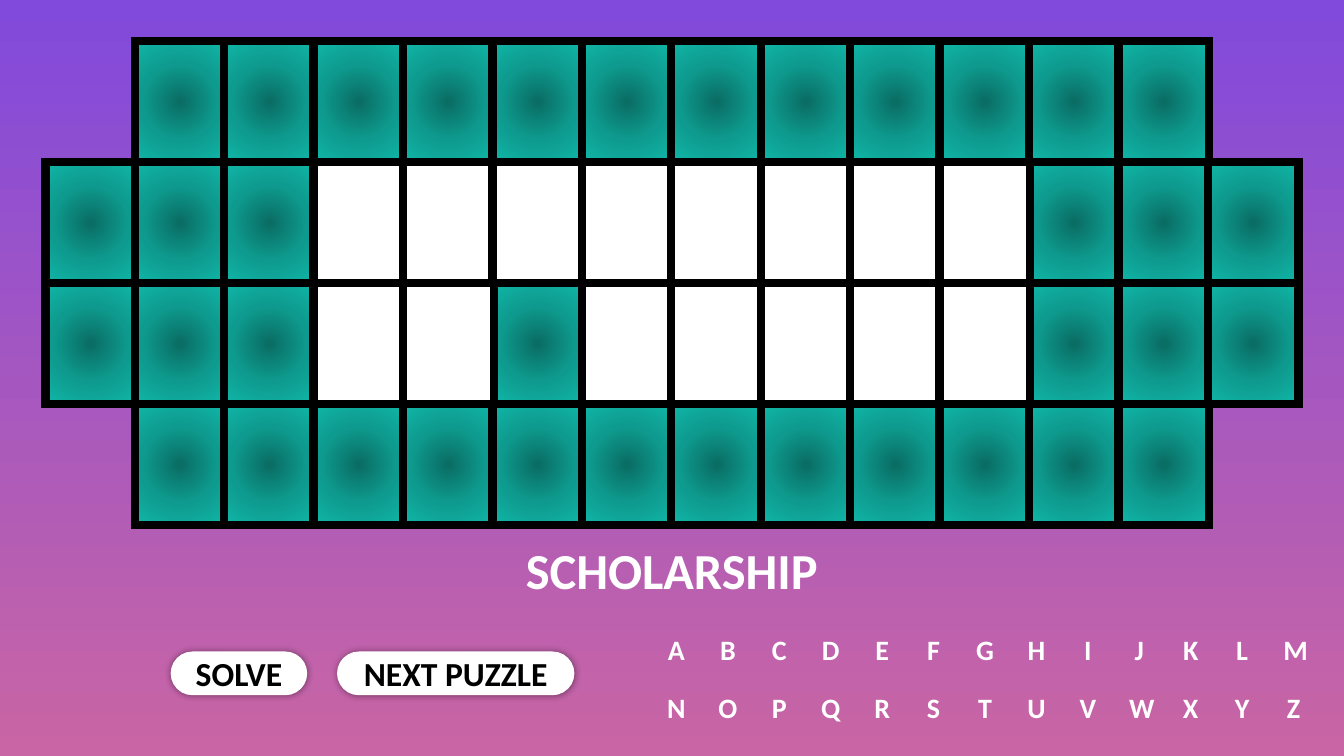
from dataclasses import dataclass
from typing import Any

from lxml.etree import SubElement as Sub
from pptx import Presentation
from pptx.dml.color import RGBColor
from pptx.enum.shapes import MSO_SHAPE as Preset
from pptx.enum.text import MSO_ANCHOR as Anchor, PP_ALIGN as Align
from pptx.oxml.ns import qn
from pptx.util import Inches, Pt

WIDTH, HEIGHT = 13.33, 7.5
FONT = "Calibri"
WHITE, BLACK = "FFFFFF", "000000"
BACKDROP = [(0, "8149DC"), (100, "C965A4")]
TEAL = [(0, "0A6C63"), (50, "0E9A8E"), (100, "10B7A8")]

# T is a teal tile, W a white one, a dot leaves the cell empty
BOARD = [
    ".TTTTTTTTTTTT.",
    "TTTWWWWWWWWTTT",
    "TTTWWTWWWWWTTT",
    ".TTTTTTTTTTTT.",
]
ALPHABET = ["ABCDEFGHIJKLM", "NOPQRSTUVWXYZ"]


@dataclass(frozen=True)
class Box:
    left: float
    top: float
    width: float
    height: float

    def emu(self) -> list[int]:
        return [Inches(v) for v in (self.left, self.top, self.width, self.height)]


@dataclass(frozen=True)
class Grid:
    left: float
    top: float
    column: float
    row: float
    cell_width: float
    cell_height: float

    def cell(self, column: int, row: int) -> Box:
        return Box(self.left + column * self.column, self.top + row * self.row,
                   self.cell_width, self.cell_height)


@dataclass(frozen=True)
class Button:
    label: str
    box: Box


TILES = Grid(0.45, 0.41, (11.98 - 0.45) / 13, 1.2, 0.9, 1.2)
LETTERS = Grid(6.51, 6.13, 0.51, 0.58, 0.4, 0.62)
BUTTONS = [
    Button("SOLVE", Box(1.7, 6.47, 1.34, 0.42)),
    Button("NEXT PUZZLE", Box(3.35, 6.47, 2.34, 0.42)),
]


def colour(value: str) -> RGBColor:
    return RGBColor.from_string(value)


def set_gradient(fill: Any, owner: Any, stops: list[tuple[int, str]], radial: bool) -> None:
    fill.gradient()
    gradient = next(owner.iter(qn("a:gradFill")))
    for child in list(gradient):
        gradient.remove(child)
    stop_list = Sub(gradient, qn("a:gsLst"))
    for position, value in stops:
        stop = Sub(stop_list, qn("a:gs"), pos=str(position * 1000))
        Sub(stop, qn("a:srgbClr"), val=value)
    if radial:
        direction = Sub(gradient, qn("a:path"), path="circle")
        Sub(direction, qn("a:fillToRect"), l="50000", t="50000", r="50000", b="50000")
    else:
        Sub(gradient, qn("a:lin"), ang="5400000", scaled="0")


def write(shape: Any, text: str, size: int, value: str) -> None:
    frame = shape.text_frame
    frame.text = text
    frame.word_wrap = True
    frame.vertical_anchor = Anchor.MIDDLE
    para = frame.paragraphs[0]
    para.alignment = Align.CENTER
    font = para.runs[0].font
    font.name, font.size, font.bold = FONT, Pt(size), True
    font.color.rgb = colour(value)


def add_label(page: Any, text: str, box: Box, size: int) -> None:
    write(page.shapes.add_textbox(*box.emu()), text, size, WHITE)


def add_tile(page: Any, box: Box, kind: str) -> None:
    tile = page.shapes.add_shape(Preset.RECTANGLE, *box.emu())
    if kind == "T":
        set_gradient(tile.fill, tile.element, TEAL, radial=True)
    else:
        tile.fill.solid()
        tile.fill.fore_color.rgb = colour(WHITE)
    tile.line.color.rgb = colour(BLACK)
    tile.line.width = Pt(6)
    # Square corners on the thick outline
    Sub(tile.element.spPr.find(qn("a:ln")), qn("a:miter"), lim="800000")
    tile.shadow.inherit = False


def add_button(page: Any, button: Button) -> None:
    pill = page.shapes.add_shape(Preset.ROUNDED_RECTANGLE, *button.box.emu())
    pill.adjustments[0] = 0.5
    pill.fill.solid()
    pill.fill.fore_color.rgb = colour(WHITE)
    pill.line.color.rgb = colour(WHITE)
    pill.line.width = Pt(1)
    # Soft glow-like shadow
    pill.shadow.inherit = False
    effects = pill.element.spPr.find(qn("a:effectLst"))
    shadow = Sub(effects, qn("a:outerShdw"), blurRad=str(Pt(5)), dist="0", dir="0",
                 algn="ctr", rotWithShape="0")
    Sub(Sub(shadow, qn("a:srgbClr"), val=BLACK), qn("a:alpha"), val="40000")
    write(pill, button.label, 24, BLACK)


def main() -> None:
    deck = Presentation()
    deck.slide_width, deck.slide_height = Inches(WIDTH), Inches(HEIGHT)
    page = deck.slides.add_slide(deck.slide_layouts[6])
    set_gradient(page.background.fill, page.element, BACKDROP, radial=False)

    # Puzzle board: teal tiles first, white ones above them
    for kind in "TW":
        for row, cells in enumerate(BOARD):
            for column, cell in enumerate(cells):
                if cell == kind:
                    add_tile(page, TILES.cell(column, row), kind)

    # Category, buttons and alphabet
    add_label(page, "SCHOLARSHIP", Box(0, 5.34, WIDTH, 0.62), 36)
    for button in BUTTONS:
        add_button(page, button)
    for row, letters in enumerate(ALPHABET):
        for column, letter in enumerate(letters):
            add_label(page, letter, LETTERS.cell(column, row), 20)

    deck.save("out.pptx")


if __name__ == "__main__":
    main()
